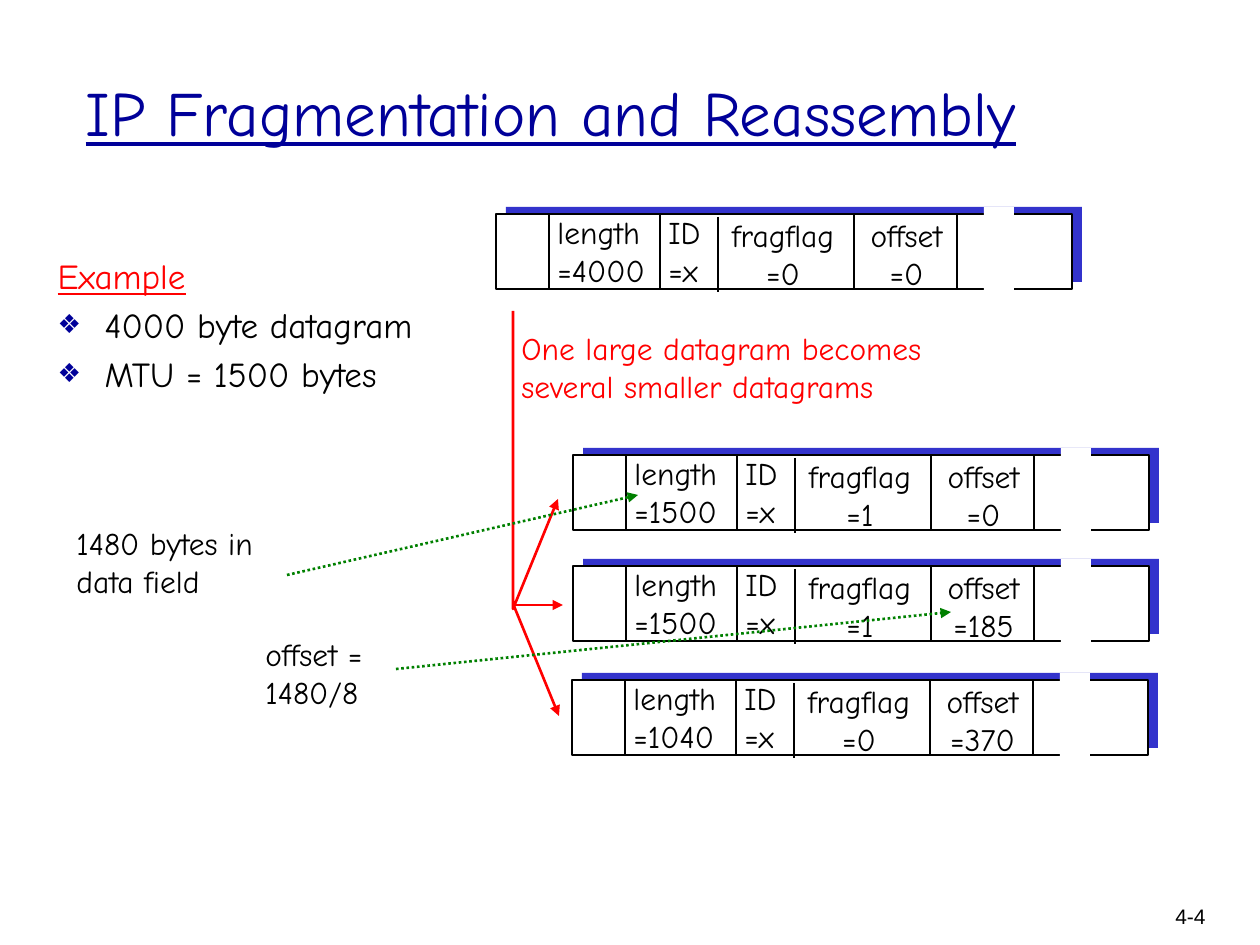
from lxml.etree import SubElement
from pptx import Presentation
from pptx.dml.color import RGBColor
from pptx.enum.dml import MSO_LINE
from pptx.enum.shapes import MSO_CONNECTOR, MSO_SHAPE
from pptx.enum.text import MSO_ANCHOR, MSO_AUTO_SIZE, PP_ALIGN
from pptx.oxml.ns import qn
from pptx.util import Pt

SCALE = 914400 / 126
FONT = "Comic Neue"
BLACK, WHITE, RED, GREEN = "000000", "FFFFFF", "FF0000", "008000"
NAVY, BLUE = "000099", "3333CC"
DATAGRAMS = [
    (496, 214, "4000", "0", "0"),
    (573, 455, "1500", "1", "0"),
    (573, 566, "1500", "1", "185"),
    (572, 680, "1040", "0", "370"),
]


def px(*lengths):
    """Turn lengths in px into EMU."""
    return [round(length * SCALE) for length in lengths]


def color(value):
    """Turn a hex string into a colour."""
    return RGBColor.from_string(value)


def format_paragraph(para, size, ink, align=PP_ALIGN.LEFT, font=FONT, underline=False):
    """Format a paragraph and all its runs."""
    para.alignment = align
    for span in para.runs:
        span.font.name = font
        span.font.size = Pt(size)
        span.font.color.rgb = color(ink)
        span.font.underline = underline


def add_text(page, box, text, ink=BLACK, align=PP_ALIGN.LEFT, size=18, font=FONT, wrap=False):
    """Add a text box."""
    frame = page.shapes.add_textbox(*px(*box)).text_frame
    frame.text = text
    frame.word_wrap = wrap
    frame.auto_size = MSO_AUTO_SIZE.NONE if wrap else MSO_AUTO_SIZE.SHAPE_TO_FIT_TEXT
    for para in frame.paragraphs:
        format_paragraph(para, size, ink, align, font)


def add_rectangle(page, box, fill, outline=None):
    """Add a flat rectangle, outlined if a colour is given."""
    rectangle = page.shapes.add_shape(MSO_SHAPE.RECTANGLE, *px(*box))
    rectangle.shadow.inherit = False
    rectangle.fill.solid()
    rectangle.fill.fore_color.rgb = color(fill)
    if outline:
        rectangle.line.color.rgb = color(outline)
        rectangle.line.width = Pt(1.5)
    else:
        rectangle.line.fill.background()


def style_line(line, ink, arrow):
    """Set a line's colour and width, and its arrowhead if wanted."""
    line.color.rgb = color(ink)
    line.width = Pt(1.5)
    if arrow:
        SubElement(line._get_or_add_ln(), qn("a:tailEnd"), type="triangle")


def add_line(page, start, end, ink=BLACK, arrow=False, dash=None):
    """Add a straight line or arrow."""
    connector = page.shapes.add_connector(MSO_CONNECTOR.STRAIGHT, *px(*start, *end))
    if dash:
        connector.line.dash_style = dash
    style_line(connector.line, ink, arrow)
    SubElement(connector._element.spPr, qn("a:effectLst"))


def add_title(page, box):
    """Fill and place the title."""
    title = page.shapes.title
    title.left, title.top, title.width, title.height = px(*box)
    title.text_frame.text = "IP Fragmentation and Reassembly"
    title.text_frame.vertical_anchor = MSO_ANCHOR.MIDDLE
    format_paragraph(title.text_frame.paragraphs[0], 36, NAVY, underline=True)


def add_example(page, box):
    """Fill and place the list with its heading."""
    body = page.placeholders[1]
    body.left, body.top, body.width, body.height = px(*box)
    frame = body.text_frame
    frame.text = "Example\n4000 byte datagram\nMTU = 1500 bytes"
    frame.auto_size = MSO_AUTO_SIZE.NONE
    for index, para in enumerate(frame.paragraphs):
        heading = index == 0
        format_paragraph(para, 20, RED if heading else BLACK, underline=heading)
        para.space_before = Pt(4)
        properties = para._p.get_or_add_pPr()
        indent = px(47)[0]
        properties.set("marL", str(indent))
        properties.set("indent", str(-indent))
        if heading:
            SubElement(properties, qn("a:buNone"))
            continue
        bullet_color = SubElement(properties, qn("a:buClr"))
        SubElement(bullet_color, qn("a:srgbClr"), val=NAVY)
        SubElement(properties, qn("a:buSzPct"), val="75000")
        SubElement(properties, qn("a:buChar"), char="❖")


def add_datagram(page, left, top, length, flag, offset):
    """Draw a datagram header with its four fields."""
    width, height = 576, 75
    add_rectangle(page, (left + 10, top - 7, width, height), BLUE)
    add_rectangle(page, (left, top, width, height), WHITE, BLACK)
    fields = [
        (49, -7, 118, f"length\n={length}", PP_ALIGN.LEFT),
        (160, -7, 66, "ID\n=x", PP_ALIGN.LEFT),
        (214, -4, 146, f"fragflag\n={flag}", PP_ALIGN.CENTER),
        (350, -4, 121, f"offset\n={offset}", PP_ALIGN.CENTER),
    ]
    for x, y, field_width, text, align in fields:
        add_text(page, (left + x, top + y, field_width, 88), text, align=align)
    for x, y in [(53, 0), (164, 0), (222, 3), (358, 0), (461, 0)]:
        add_line(page, (left + x, top + y), (left + x, top + y + height))
    add_rectangle(page, (left + 488, top - 7, 30, 83), WHITE)


def add_split(page, left, top):
    """Draw the red arrows from the large datagram to its fragments."""
    builder = page.shapes.build_freeform(left, top, scale=SCALE)
    builder.add_line_segments([(left, top + 298), (left + 45, top + 188)], close=False)
    trunk = builder.convert_to_shape()
    trunk.shadow.inherit = False
    trunk.fill.background()
    style_line(trunk.line, RED, True)
    add_line(page, (left, top + 294), (left + 50, top + 294), RED, True)
    add_line(page, (left + 1, top + 295), (left + 46, top + 405), RED, True)
    caption = "One large datagram becomes\nseveral smaller datagrams"
    add_text(page, (left - 4, top + 12, 450, 88), caption, RED)


def add_note(page, box, text, start, end):
    """Add a note and the dotted arrow to the field it explains."""
    add_text(page, box, text)
    add_line(page, start, end, GREEN, True, MSO_LINE.ROUND_DOT)


def main():
    """Build and save the slide."""
    deck = Presentation()
    deck.slide_width, deck.slide_height = px(1260, 945)
    page = deck.slides.add_slide(deck.slide_layouts[1])
    add_title(page, (73, 32, 1071, 158))
    for datagram in DATAGRAMS:
        add_datagram(page, *datagram)
    add_split(page, 513, 311)
    add_example(page, (45, 248, 391, 232))
    add_note(page, (64, 518, 233, 88), "1480 bytes in\vdata field", (287, 575), (638, 495))
    add_note(page, (253, 629, 146, 88), "offset =\n1480/8", (396, 669), (951, 612))
    add_text(page, (1125, 897, 93, 48), "4-4", BLACK, PP_ALIGN.RIGHT, 12, "Arial", True)
    deck.save("out.pptx")


if __name__ == "__main__":
    main()
